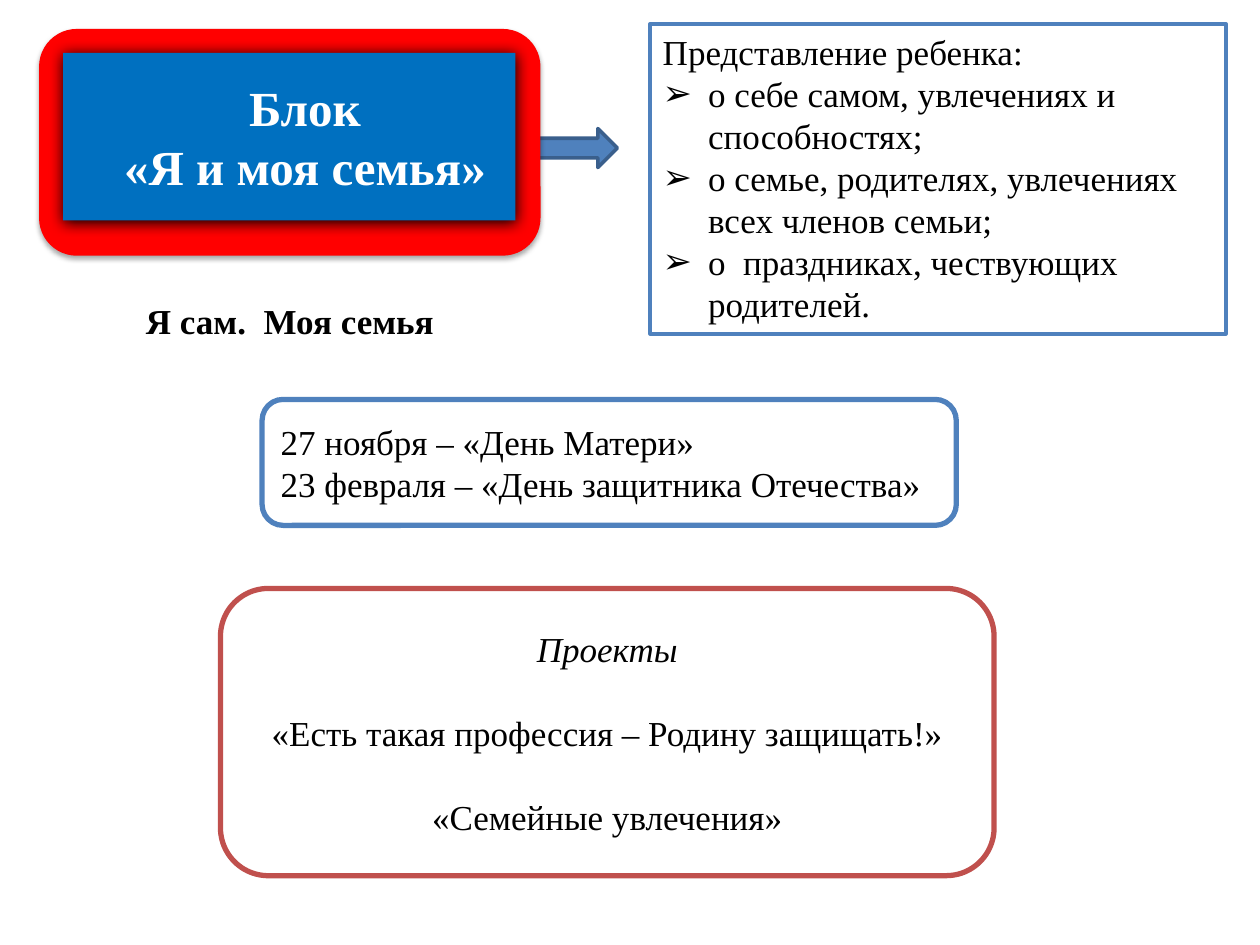
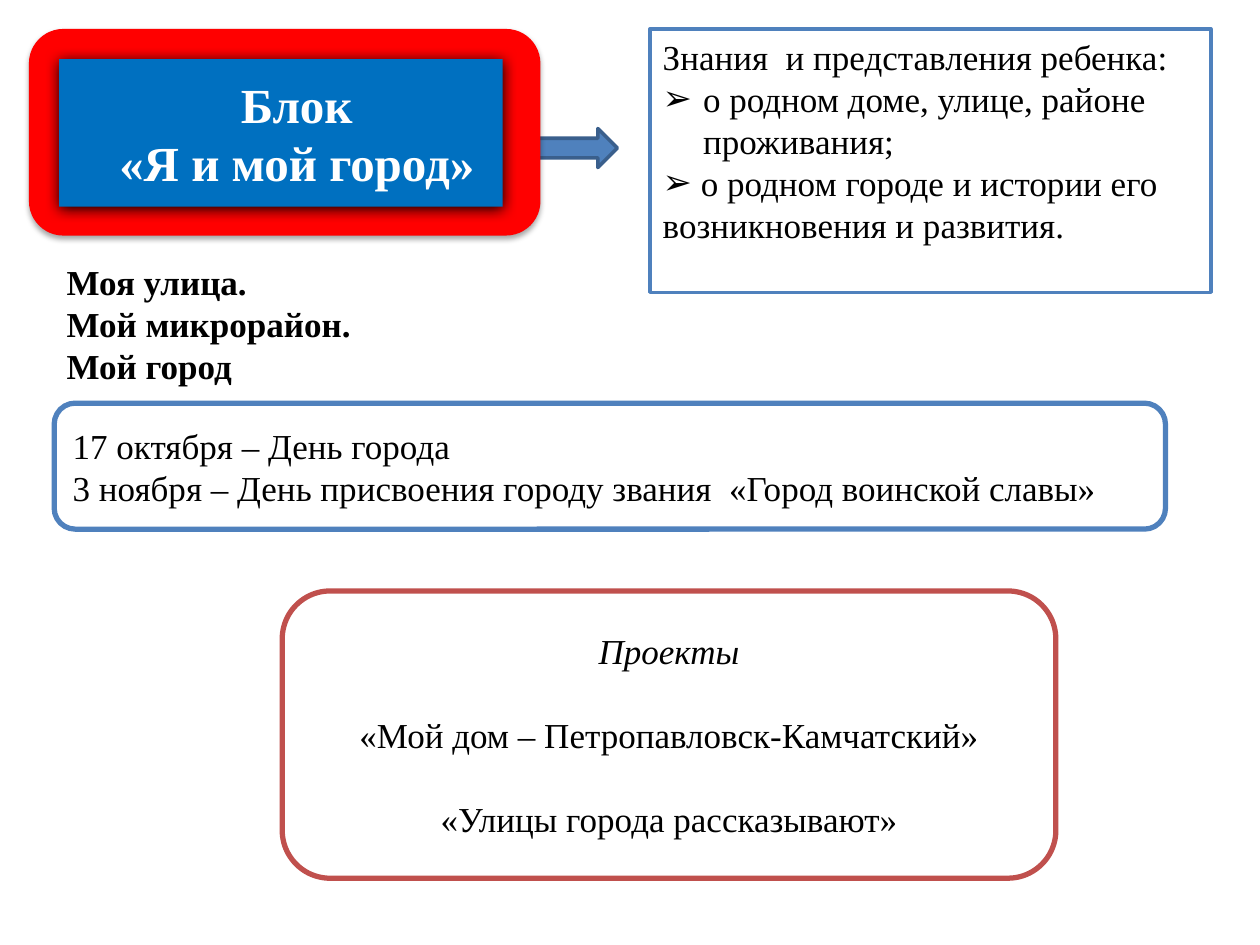
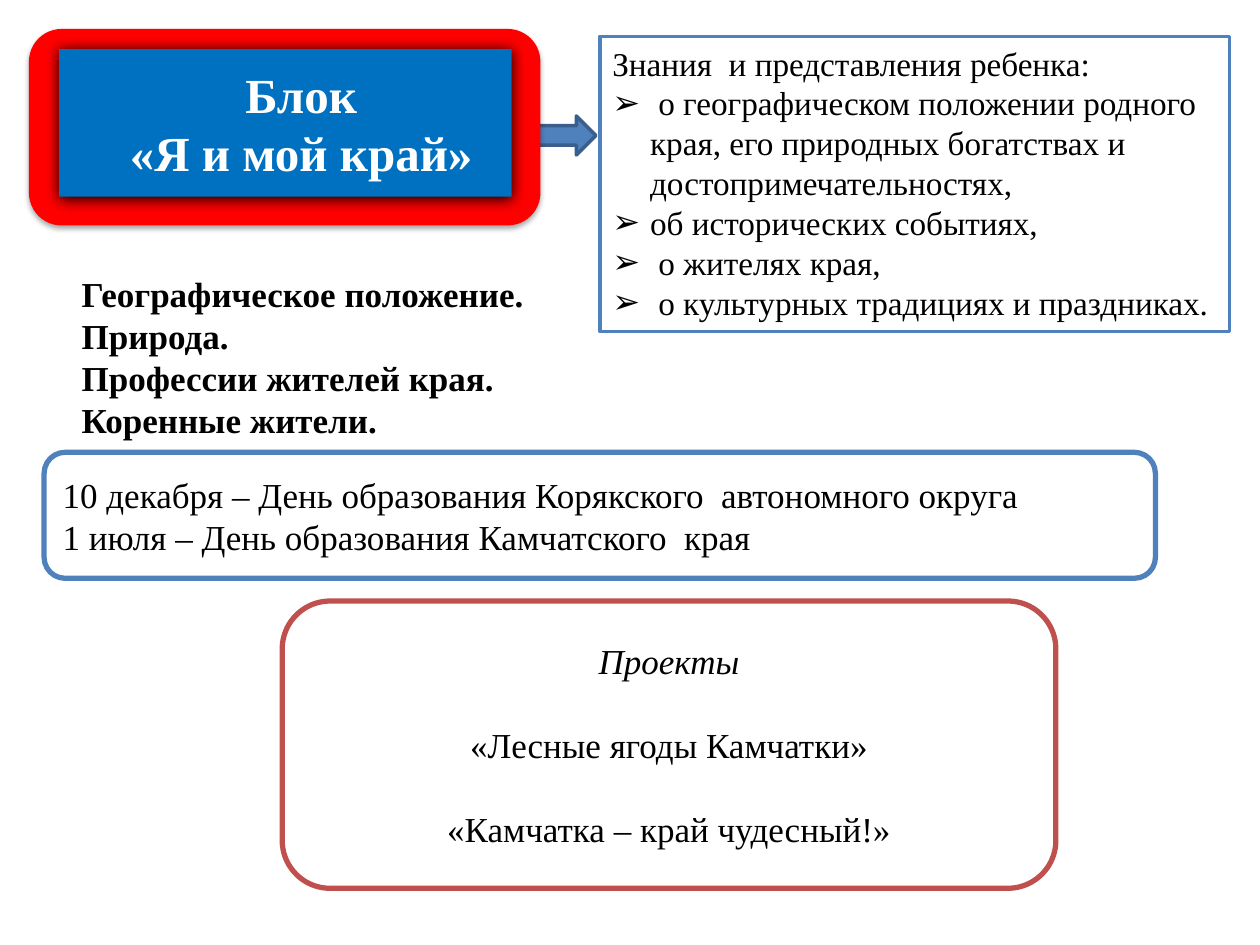
from dataclasses import dataclass

from lxml.etree import SubElement
from pptx import Presentation
from pptx.dml.color import RGBColor
from pptx.enum.shapes import MSO_SHAPE as Preset
from pptx.enum.text import MSO_ANCHOR as Anchor, MSO_AUTO_SIZE as AutoSize, PP_ALIGN as Align
from pptx.oxml.ns import qn
from pptx.util import Inches, Pt

FONT = "Times New Roman"
COLORS = {
    "black": "000000",
    "white": "FFFFFF",
    "red": "FF0000",
    "title": "0070C0",
    "blue": "4F81BD",
    "arrow_edge": "3A5F8C",
    "brick": "C0504D",
}
CARD_SHADOW = {"alpha": 35, "blur": 3.1, "distance": 1.8}
TITLE_SHADOW = {"alpha": 100, "blur": 8.5, "distance": 1}
ARROW_SIZE = (1.07, 0.31)
PROJECTS_SIZE = (6.14, 2.28)
TITLE_INDENT = 0.25


@dataclass
class Block:
    """Texts of one slide and the boxes (left, top, width, height) they fill."""
    title: str
    card_box: tuple
    title_box: tuple
    arrow_at: tuple
    heading: str
    goals: list  # pairs of text and hanging indent
    goals_box: tuple
    topics: list
    topics_box: tuple
    dates: list
    dates_box: tuple
    projects: list
    projects_at: tuple
    goals_size: int = 20
    topics_wrap: bool = False


BLOCKS = [
    Block(
        title="«Я и моя семья»",
        card_box=(0.31, 0.23, 3.98, 1.8),
        title_box=(0.5, 0.42, 3.59, 1.33),
        arrow_at=(3.83, 1.02),
        heading="Представление ребенка:",
        goals=[
            ("о себе самом, увлечениях и способностях;", 0.36),
            ("о семье, родителях, увлечениях всех членов семьи;", 0.36),
            ("о  праздниках, чествующих родителей.", 0.36),
        ],
        goals_box=(5.16, 0.19, 4.57, 2.46),
        topics=["Я сам.  Моя семья"],
        topics_box=(1.06, 2.33, 2.51, 0.44),
        dates=["27 ноября – «День Матери»", "23 февраля – «День защитника Отечества»"],
        dates_box=(2.08, 3.17, 5.51, 1),
        projects=["«Есть такая профессия – Родину защищать!»", "«Семейные увлечения»"],
        projects_at=(1.75, 4.67),
    ),
    Block(
        title="«Я и мой город»",
        card_box=(0.23, 0.23, 4.06, 1.64),
        title_box=(0.47, 0.47, 3.52, 1.17),
        arrow_at=(3.83, 1.02),
        heading="Знания  и представления ребенка:",
        goals=[
            ("о родном доме, улице, районе проживания;", 0.32),
            (" о родном городе и истории его возникновения и развития.", 0),
        ],
        goals_box=(5.16, 0.23, 4.45, 2.09),
        topics=["Моя улица.", "Мой микрорайон.", "Мой город"],
        topics_box=(0.43, 2.02, 2.54, 1.11),
        dates=[
            "17 октября – День города",
            "3 ноября – День присвоения городу звания  «Город воинской славы»",
        ],
        dates_box=(0.43, 3.2, 8.82, 1),
        projects=["«Мой дом – Петропавловск-Камчатский»", "«Улицы города рассказывают»"],
        projects_at=(2.24, 4.69),
    ),
    Block(
        title="«Я и мой край»",
        card_box=(0.23, 0.23, 4.06, 1.56),
        title_box=(0.47, 0.39, 3.59, 1.17),
        arrow_at=(3.66, 0.92),
        heading="Знания  и представления ребенка:",
        goals=[
            (" о географическом положении родного края, его природных богатствах"
             " и достопримечательностях,", 0.3),
            ("об исторических событиях,", 0.3),
            (" о жителях края,", 0.3),
            (" о культурных традициях и праздниках.", 0.3),
        ],
        goals_box=(4.76, 0.29, 5, 2.34),
        goals_size=19,
        topics=[
            "Географическое положение.",
            "Природа.",
            "Профессии жителей края.",
            "Коренные жители.",
        ],
        topics_box=(0.55, 2.11, 4.06, 2.05),
        topics_wrap=True,
        dates=[
            "10 декабря – День образования Корякского  автономного округа",
            "1 июля – День образования Камчатского  края",
        ],
        dates_box=(0.35, 3.59, 8.82, 1),
        projects=["«Лесные ягоды Камчатки»", "«Камчатка – край чудесный!»"],
        projects_at=(2.24, 4.77),
    ),
]


def rgb(name):
    return RGBColor.from_string(COLORS[name])


def paint(shape, fill, line=None, width=0):
    shape.shadow.inherit = False
    shape.fill.solid()
    shape.fill.fore_color.rgb = rgb(fill)
    if line:
        shape.line.color.rgb = rgb(line)
        shape.line.width = Pt(width)
    else:
        shape.line.fill.background()


def cast_shadow(shape, alpha, blur, distance):
    effects = shape.element.spPr.find(qn("a:effectLst"))
    shadow = SubElement(effects, qn("a:outerShdw"), blurRad=str(Pt(blur)),
                        dist=str(Pt(distance)), dir="5400000", rotWithShape="0")
    color = SubElement(shadow, qn("a:srgbClr"), val=COLORS["black"])
    SubElement(color, qn("a:alpha"), val=str(alpha * 1000))


def add_box(page, preset, box, **look):
    shape = page.shapes.add_shape(preset, *map(Inches, box))
    paint(shape, **look)
    return shape


def shape_placeholder(holder, box, preset, **look):
    """Moves a placeholder to the box and gives it a preset outline."""
    holder.left, holder.top, holder.width, holder.height = map(Inches, box)
    outline = SubElement(holder.element.spPr, qn("a:prstGeom"), prst=preset)
    SubElement(outline, qn("a:avLst"))
    paint(holder, **look)


def write(frame, lines, size=20, color="black", bold=False, italic=False,
          align=Align.LEFT, anchor=Anchor.MIDDLE, wrap=True, gap=0):
    """Fills a text frame with one paragraph a line and returns the paragraphs."""
    frame.word_wrap = wrap
    frame.auto_size = AutoSize.NONE
    frame.vertical_anchor = anchor
    for index, line in enumerate(lines):
        para = frame.add_paragraph() if index else frame.paragraphs[0]
        para.alignment = align
        para.space_before = Pt(gap if index else 0)
        span = para.add_run()
        span.text = line
        span.font.name, span.font.size = FONT, Pt(size)
        span.font.bold, span.font.italic = bold, italic
        span.font.color.rgb = rgb(color)
    return frame.paragraphs


def set_indent(para, margin, first, bullet=None):
    properties = para._p.get_or_add_pPr()
    properties.set("marL", str(Inches(margin)))
    properties.set("indent", str(Inches(first)))
    if bullet:
        SubElement(properties, qn("a:buChar"), char=bullet)
    else:
        SubElement(properties, qn("a:buNone"))


def add_title_card(page, block):
    add_box(page, Preset.RIGHT_ARROW, block.arrow_at + ARROW_SIZE,
            fill="blue", line="arrow_edge", width=2)
    card = add_box(page, Preset.ROUNDED_RECTANGLE, block.card_box, fill="red")
    cast_shadow(card, **CARD_SHADOW)
    title = page.shapes.title
    shape_placeholder(title, block.title_box, "roundRect", fill="title")
    cast_shadow(title, **TITLE_SHADOW)
    card.element.addnext(title.element)
    for para in write(title.text_frame, ["Блок", block.title], size=28, color="white",
                      bold=True, align=Align.CENTER):
        set_indent(para, 0, TITLE_INDENT)


def add_goals(page, block):
    body = page.placeholders[1]
    shape_placeholder(body, block.goals_box, "rect", fill="white", line="blue", width=2)
    lines = [block.heading] + [text for text, hang in block.goals]
    heading, *items = write(body.text_frame, lines, size=block.goals_size, anchor=Anchor.TOP)
    set_indent(heading, 0, 0)
    for para, (text, hang) in zip(items, block.goals):
        set_indent(para, hang, -hang, bullet="➢")


def add_topics(page, block):
    label = page.shapes.add_textbox(*map(Inches, block.topics_box))
    write(label.text_frame, block.topics, bold=True, anchor=Anchor.TOP, wrap=block.topics_wrap)


def add_dates(page, block):
    panel = add_box(page, Preset.ROUNDED_RECTANGLE, block.dates_box,
                    fill="white", line="blue", width=3)
    write(panel.text_frame, block.dates)


def add_projects(page, block):
    panel = add_box(page, Preset.ROUNDED_RECTANGLE, block.projects_at + PROJECTS_SIZE,
                    fill="white", line="brick", width=3)
    heading, *names = write(panel.text_frame, ["Проекты"] + block.projects,
                            align=Align.CENTER, gap=24)
    heading.runs[0].font.italic = True


def build_deck():
    deck = Presentation()
    deck.slide_width, deck.slide_height = Inches(10), Inches(7.5)
    for block in BLOCKS:
        page = deck.slides.add_slide(deck.slide_layouts[1])
        for add_region in (add_title_card, add_goals, add_topics, add_dates, add_projects):
            add_region(page, block)
    deck.save("out.pptx")


if __name__ == "__main__":
    build_deck()
